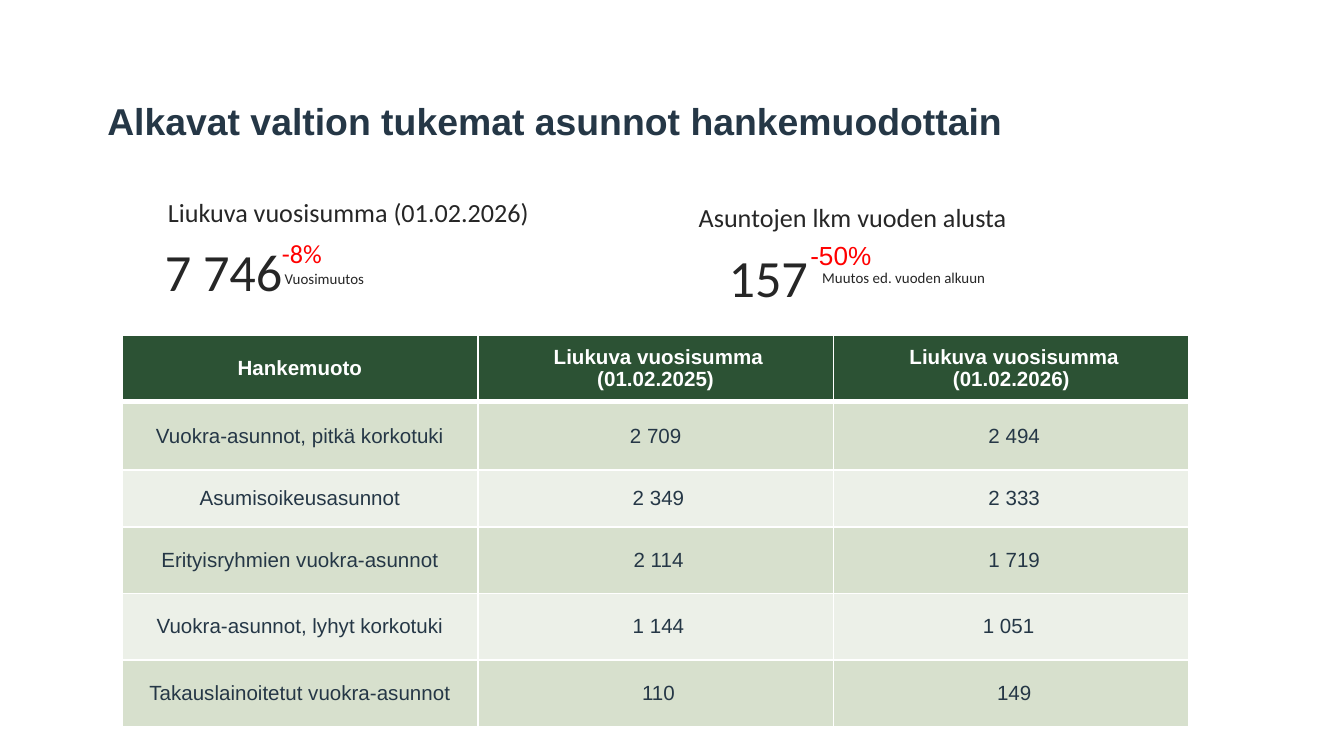
from lxml.etree import SubElement
from pptx import Presentation
from pptx.dml.color import RGBColor
from pptx.enum.text import MSO_ANCHOR, PP_ALIGN
from pptx.oxml.ns import qn
from pptx.util import Pt

NAVY, INK, RED, WHITE = "253746", "262626", "FF0000", "FFFFFF"
GREEN, BAND_DARK, BAND_LIGHT = "2C5234", "D7E0CD", "ECF0E8"


def color(hex_code):
    return RGBColor.from_string(hex_code)


def write(frame, text, size=14, font="Calibri", ink=INK, bold=False,
          align=PP_ALIGN.LEFT):
    paragraph = frame.paragraphs[0]
    paragraph.alignment = align
    run = paragraph.add_run()
    run.text = text
    run.font.size = Pt(size)
    run.font.name = font
    run.font.bold = bold
    run.font.color.rgb = color(ink)


class Page:
    def __init__(self, slide):
        self.slide = slide

    def label(self, text, left, top, width, height,
              anchor=MSO_ANCHOR.TOP, **style):
        box = self.slide.shapes.add_textbox(
            Pt(left), Pt(top), Pt(width), Pt(height))
        frame = box.text_frame
        frame.word_wrap = True
        frame.vertical_anchor = anchor
        write(frame, text, **style)

    def border(self, cell, side, width):
        line = SubElement(cell._tc.get_or_add_tcPr(), qn(f"a:ln{side}"),
                          w=str(Pt(width)))
        fill = SubElement(line, qn("a:solidFill"))
        SubElement(fill, qn("a:srgbClr"), val=WHITE)

    def table(self, rows, left, top, column_width, heights):
        columns = len(rows[0])
        grid = self.slide.shapes.add_table(
            len(rows), columns, Pt(left), Pt(top),
            Pt(column_width * columns), Pt(sum(heights))).table
        for column in grid.columns:
            column.width = Pt(column_width)
        for r, (values, height) in enumerate(zip(rows, heights)):
            grid.rows[r].height = Pt(height)
            header = r == 0
            fill = GREEN if header else BAND_DARK if r % 2 else BAND_LIGHT
            for c, value in enumerate(values):
                cell = grid.cell(r, c)
                # A thicker rule separates the header from the body
                widths = {"L": 1, "R": 1, "T": 3 if r == 1 else 1,
                          "B": 3 if header else 1}
                for side, width in widths.items():
                    self.border(cell, side, width)
                cell.fill.solid()
                cell.fill.fore_color.rgb = color(fill)
                cell.vertical_anchor = MSO_ANCHOR.MIDDLE
                write(cell.text_frame, value, size=11, font="Arial",
                      ink=WHITE if header else NAVY, bold=header,
                      align=PP_ALIGN.CENTER)


def main():
    deck = Presentation()
    deck.slide_width, deck.slide_height = Pt(720), Pt(405)
    page = Page(deck.slides.add_slide(deck.slide_layouts[6]))

    # Title
    page.label("Alkavat valtion tukemat asunnot hankemuodottain",
               50.4, 51.1, 620, 27.4, MSO_ANCHOR.MIDDLE,
               size=20, font="Arial", ink=NAVY, bold=True)

    # Rolling annual total
    page.label("7 746", 0, 124.6, 158.4, 41, MSO_ANCHOR.BOTTOM,
               size=28, align=PP_ALIGN.RIGHT)
    page.label("-8%", 144, 123.8, 117.4, 23.8, MSO_ANCHOR.BOTTOM, ink=RED)
    page.label("Liukuva vuosisumma (01.02.2026)", 82.8, 101.5, 231.8, 23.8)
    page.label("Vuosimuutos", 145.4, 141.1, 90.7, 17.3, size=8)

    # Dwellings since the start of the year
    page.label("157", 292.3, 127.4, 147.6, 41, MSO_ANCHOR.BOTTOM,
               size=28, align=PP_ALIGN.RIGHT)
    page.label("-50%", 427, 124.6, 105.8, 23.8, MSO_ANCHOR.BOTTOM,
               font="Arial", ink=RED)
    page.label("Asuntojen lkm vuoden alusta", 367.2, 104.4, 181.4, 24.5)
    page.label("Muutos ed. vuoden alkuun", 433.4, 140.4, 185.8, 17.3, size=8)

    # Totals by project type
    page.table([
        ("Hankemuoto", " Liukuva vuosisumma (01.02.2025)",
         " Liukuva vuosisumma (01.02.2026)"),
        ("Vuokra-asunnot, pitkä korkotuki", " 2 709 ", " 2 494"),
        ("Asumisoikeusasunnot", " 2 349", " 2 333"),
        ("Erityisryhmien vuokra-asunnot", " 2 114", " 1 719"),
        ("Vuokra-asunnot, lyhyt korkotuki", " 1 144", "1 051 "),
        ("Takauslainoitetut vuokra-asunnot", " 110", " 149"),
    ], left=65.4, top=179.5, column_width=190.6,
        heights=[35.7, 36.7, 30.4, 35.7, 35.7, 35.7])

    deck.save("out.pptx")


if __name__ == "__main__":
    main()
